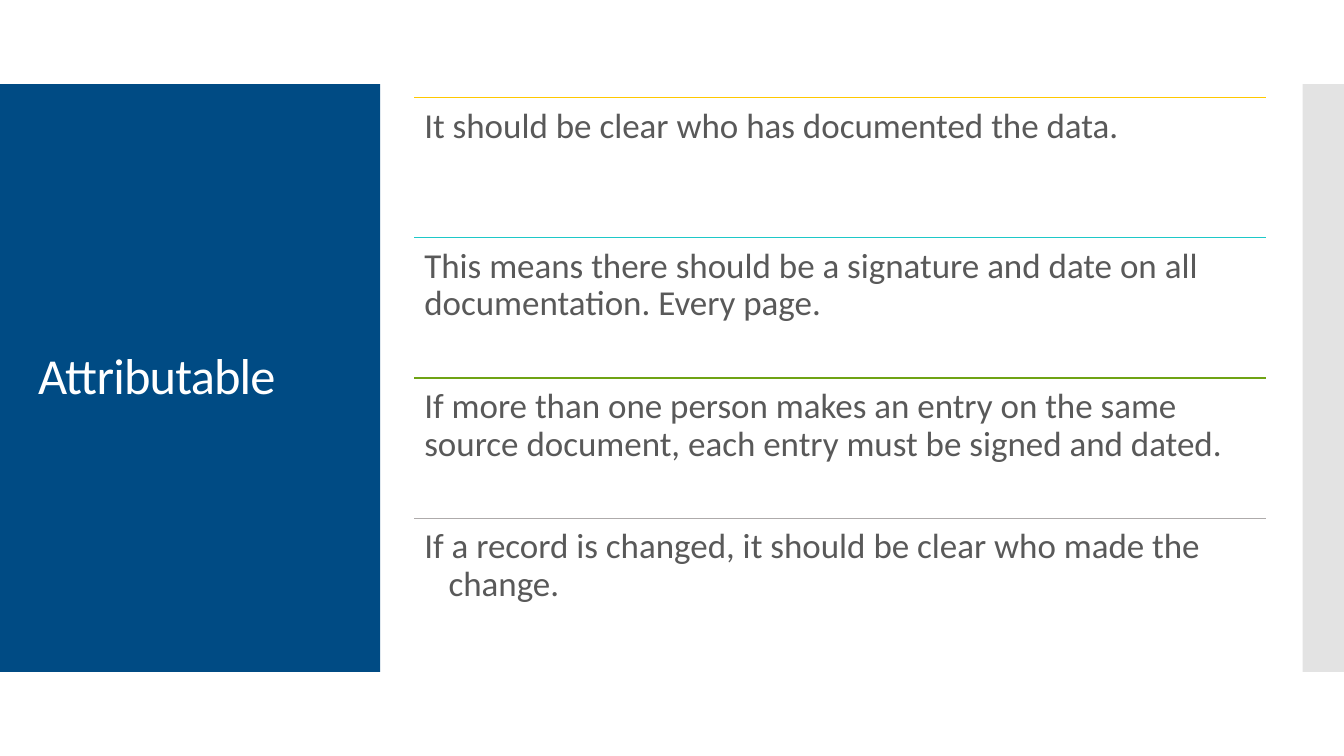
from lxml import etree
from pptx import Presentation
from pptx.dml.color import RGBColor
from pptx.enum.shapes import MSO_CONNECTOR, MSO_SHAPE
from pptx.enum.text import MSO_ANCHOR, PP_ALIGN
from pptx.oxml.ns import qn
from pptx.util import Inches, Pt

RECTANGLE = MSO_SHAPE.RECTANGLE
STRAIGHT = MSO_CONNECTOR.STRAIGHT
TOP, MIDDLE = MSO_ANCHOR.TOP, MSO_ANCHOR.MIDDLE
LEFT = PP_ALIGN.LEFT

SLIDE_W, SLIDE_H = 13.33, 7.5
BAND_TOP, BAND_H = SLIDE_H / 9, SLIDE_H * 7 / 9
FONT = "Calibri"
COLORS = {
    "panel": "004B84", "strip": "C8C8C8", "title": "FFFFFF", "body": "595959",
    "gold": "FFC800", "teal": "1EC8C8", "green": "6FA314", "grey": "AEABAB",
}
# Rule colour, statement, hanging indent in inches
STATEMENTS = [
    ("gold", "It should be clear who has documented the data.", 0),
    ("teal", "This means there should be a signature and date on all "
             "documentation. Every page.", 0),
    ("green", "If more than one person makes an entry on the same source "
              "document, each entry must be signed and dated.", 0),
    ("grey", "If a record is changed, it should be clear who made the change.", 0.24),
]


def rgb(name):
    return RGBColor.from_string(COLORS[name])


def add_block(slide, box, color):
    block = slide.shapes.add_shape(RECTANGLE, *map(Inches, box))
    block.shadow.inherit = False
    block.fill.solid()
    block.fill.fore_color.rgb = rgb(color)
    block.line.fill.background()
    return block


def add_text(slide, box, text, size, color, anchor):
    """Add a wrapped single-paragraph text box and return its paragraph."""
    frame = slide.shapes.add_textbox(*map(Inches, box)).text_frame
    frame.word_wrap = True
    frame.vertical_anchor = anchor
    frame.margin_left = frame.margin_right = Inches(0.1)
    frame.margin_top = frame.margin_bottom = Inches(0.1)
    paragraph = frame.paragraphs[0]
    paragraph.text = text
    paragraph.alignment = LEFT
    paragraph.line_spacing = 0.9
    paragraph.font.name = FONT
    paragraph.font.size = Pt(size)
    paragraph.font.color.rgb = rgb(color)
    return paragraph


def add_rule(slide, left, top, width, color):
    rule = slide.shapes.add_connector(
        STRAIGHT, *map(Inches, (left, top, left + width, top)))
    rule.line.color.rgb = rgb(color)
    rule.line.width = Pt(0.75)
    etree.SubElement(rule._element.spPr, qn("a:effectLst"))


def add_title_panel(slide, box, title):
    left, top, width, height = box
    add_block(slide, box, "panel")
    title_box = (left + 0.28, top + 0.4, width - 0.55, height - 0.8)
    heading = add_text(slide, title_box, title, 36, "title", MIDDLE)
    heading.runs[0].font._element.set("spc", "-60")


def add_edge_strip(slide, box):
    strip = add_block(slide, box, "strip")
    strip_color = strip._element.spPr.find(qn("a:solidFill"))[0]
    etree.SubElement(strip_color, qn("a:alpha"), val="50000")


def add_statements(slide, box, statements):
    """Stack the statements in equal rows, each under its coloured rule."""
    left, top, width, height = box
    row_h = height / len(statements)
    for row, (color, statement, hanging) in enumerate(statements):
        row_top = top + row * row_h
        add_rule(slide, left, row_top, width, color)
        paragraph = add_text(slide, (left, row_top, width, row_h),
                             statement, 25, "body", TOP)
        if hanging:
            properties = paragraph._p.get_or_add_pPr()
            properties.set("marL", str(Inches(hanging)))
            properties.set("indent", str(-Inches(hanging)))


def main():
    prs = Presentation()
    prs.slide_width, prs.slide_height = Inches(SLIDE_W), Inches(SLIDE_H)
    blank_layout = prs.slide_layouts[6]
    slide = prs.slides.add_slide(blank_layout)
    add_title_panel(slide, (0, BAND_TOP, 3.77, BAND_H), "Attributable")
    add_edge_strip(slide, (12.92, BAND_TOP, SLIDE_W - 12.92, BAND_H))
    add_statements(slide, (4.11, 0.97, 8.45, 5.56), STATEMENTS)
    prs.save("out.pptx")


if __name__ == "__main__":
    main()
